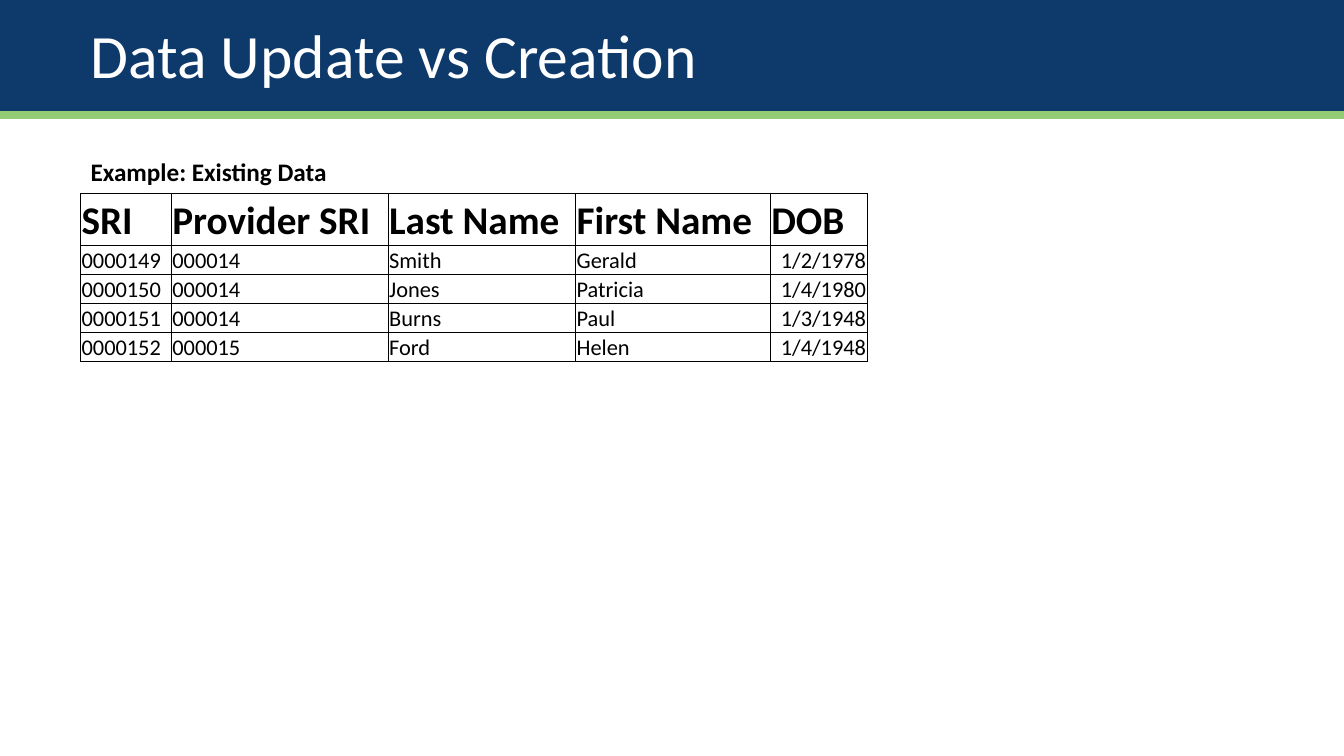
from dataclasses import dataclass

from lxml.etree import SubElement
from pptx import Presentation
from pptx.dml.color import RGBColor
from pptx.enum.shapes import MSO_SHAPE
from pptx.enum.text import MSO_ANCHOR, PP_ALIGN
from pptx.oxml.ns import qn
from pptx.slide import Slide
from pptx.table import _Cell
from pptx.text.text import _Paragraph
from pptx.util import Inches, Pt

COLORS = {"navy": "0E396B", "green": "94CC75", "white": "FFFFFF", "black": "000000"}
FONT = "Calibri"
LEFT = Inches(0.8)


@dataclass(frozen=True)
class Band:
    top: float
    height: float
    color: str


@dataclass(frozen=True)
class Column:
    heading: str
    width: float
    align: PP_ALIGN = PP_ALIGN.LEFT


BANDS = [Band(0.09, 1.09, "green"), Band(0, 1.1, "navy")]
COLUMNS = [
    Column("SRI", 0.9),
    Column("Provider SRI", 2.15),
    Column("Last Name", 1.86),
    Column("First Name", 1.93),
    Column("DOB", 0.96, PP_ALIGN.RIGHT),
]
RECORDS = [
    ("0000149", "000014", "Smith", "Gerald", "1/2/1978"),
    ("0000150", "000014", "Jones", "Patricia", "1/4/1980"),
    ("0000151", "000014", "Burns", "Paul", "1/3/1948"),
    ("0000152", "000015", "Ford", "Helen", "1/4/1948"),
]
HEADING_HEIGHT, RECORD_HEIGHT = 0.51, 0.29


def rgb(color: str) -> RGBColor:
    return RGBColor.from_string(COLORS[color])


def add_text(paragraph: _Paragraph, text: str, size: int, color: str, bold: bool) -> None:
    run = paragraph.add_run()
    run.text = text
    run.font.name = FONT
    run.font.size = Pt(size)
    run.font.bold = bold
    run.font.color.rgb = rgb(color)


def add_band(slide: Slide, band: Band, width: int) -> None:
    bar = slide.shapes.add_shape(
        MSO_SHAPE.RECTANGLE, 0, Inches(band.top), width, Inches(band.height))
    bar.shadow.inherit = False
    bar.fill.solid()
    bar.fill.fore_color.rgb = rgb(band.color)
    bar.line.fill.background()


def add_borders(cell: _Cell) -> None:
    properties = cell._tc.get_or_add_tcPr()
    for position, side in enumerate(("a:lnL", "a:lnR", "a:lnT", "a:lnB")):
        border = properties.makeelement(qn(side), {"w": str(Pt(0.5))})
        properties.insert(position, border)  # borders come before the fill
        fill = SubElement(border, qn("a:solidFill"))
        SubElement(fill, qn("a:srgbClr"), val=COLORS["black"])


def fill_cell(cell: _Cell, text: str, size: int, bold: bool, align: PP_ALIGN) -> None:
    cell.margin_left = cell.margin_right = cell.margin_top = Inches(0.01)
    cell.margin_bottom = 0
    cell.vertical_anchor = MSO_ANCHOR.BOTTOM
    cell.fill.background()
    add_borders(cell)
    paragraph = cell.text_frame.paragraphs[0]
    paragraph.alignment = align
    add_text(paragraph, text, size, "black", bold)


def add_records(slide: Slide) -> None:
    width = sum(column.width for column in COLUMNS)
    height = HEADING_HEIGHT + RECORD_HEIGHT * len(RECORDS)
    records = slide.shapes.add_table(
        len(RECORDS) + 1, len(COLUMNS), LEFT, Inches(1.92), Inches(width), Inches(height)
    ).table
    records.first_row = records.horz_banding = False
    for row in records.rows:
        row.height = Inches(RECORD_HEIGHT)
    records.rows[0].height = Inches(HEADING_HEIGHT)
    for c, column in enumerate(COLUMNS):
        records.columns[c].width = Inches(column.width)
        fill_cell(records.cell(0, c), column.heading, 28, True, PP_ALIGN.LEFT)
        for r, record in enumerate(RECORDS, start=1):
            fill_cell(records.cell(r, c), record[c], 16, False, column.align)


def add_title(slide: Slide) -> None:
    title = slide.shapes.title
    title.left, title.top = LEFT, Inches(0.2)
    title.width, title.height = Inches(11.77), Inches(1.06)
    title.text_frame.vertical_anchor = MSO_ANCHOR.TOP
    paragraph = title.text_frame.paragraphs[0]
    paragraph.alignment = PP_ALIGN.LEFT
    paragraph.line_spacing = 0.9
    add_text(paragraph, "Data Update vs Creation", 44, "white", False)
    # Bring the title in front of the bands
    title.element.getparent().append(title.element)


def add_caption(slide: Slide) -> None:
    caption = slide.shapes.add_textbox(LEFT, Inches(1.5), Inches(4.6), Inches(0.4))
    caption.text_frame.word_wrap = True
    add_text(caption.text_frame.paragraphs[0], "Example: Existing Data", 18, "black", True)


def main() -> None:
    deck = Presentation()
    deck.slide_width, deck.slide_height = Inches(13.33), Inches(7.5)
    slide = deck.slides.add_slide(deck.slide_layouts[5])

    # Header
    for band in BANDS:
        add_band(slide, band, deck.slide_width)
    add_title(slide)

    # Existing data
    add_caption(slide)
    add_records(slide)

    deck.save("out.pptx")


if __name__ == "__main__":
    main()
